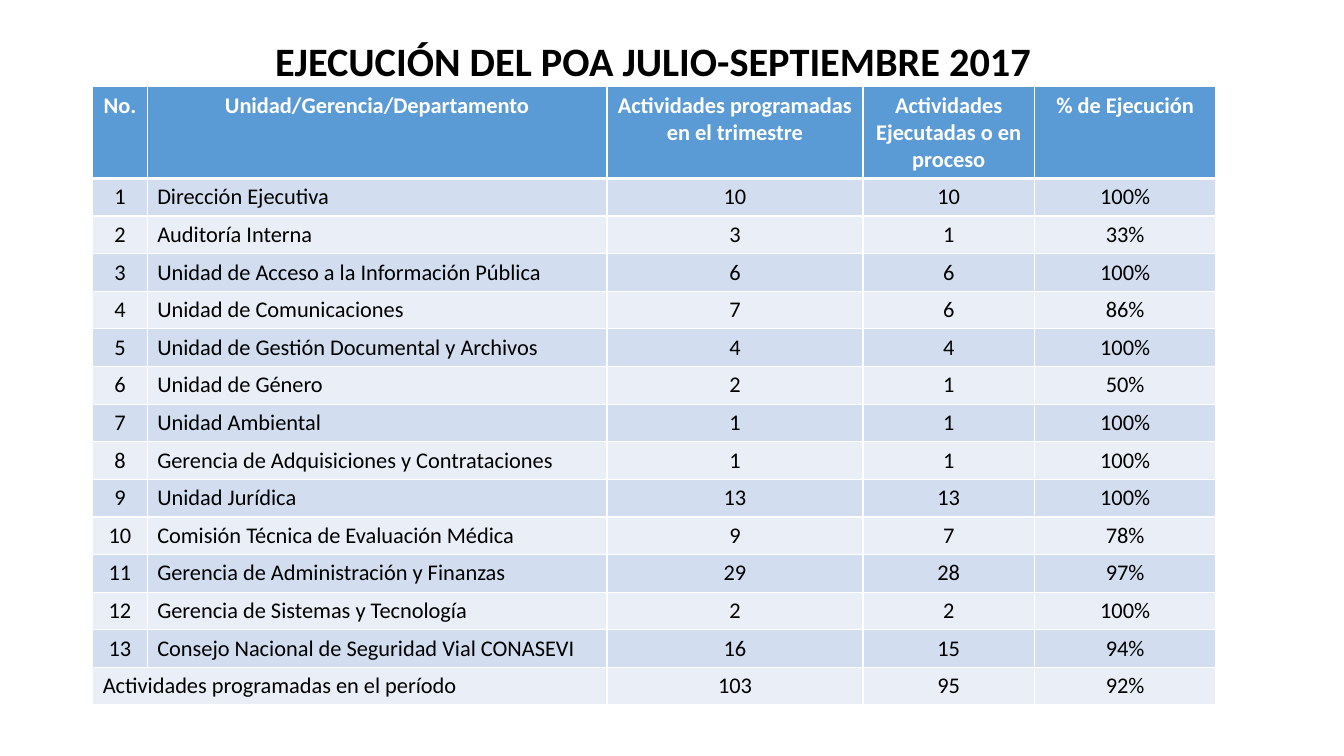
"""Builds the slide on the execution of the quarterly plan by unit."""
from lxml.etree import SubElement
from pptx import Presentation
from pptx.dml.color import RGBColor
from pptx.enum.text import MSO_ANCHOR, PP_ALIGN
from pptx.oxml.ns import qn
from pptx.util import Inches, Pt

TITLE = "EJECUCIÓN DEL POA JULIO-SEPTIEMBRE 2017"
HEADS = ["No.", "Unidad/Gerencia/Departamento",
         "Actividades programadas en el trimestre",
         "Actividades Ejecutadas o en proceso", "% de Ejecución"]
UNITS = [
    ("Dirección Ejecutiva", 10, 10),
    ("Auditoría Interna", 3, 1),
    ("Unidad de Acceso a la Información Pública", 6, 6),
    ("Unidad de Comunicaciones", 7, 6),
    ("Unidad de Gestión Documental y Archivos", 4, 4),
    ("Unidad de Género", 2, 1),
    ("Unidad Ambiental", 1, 1),
    ("Gerencia de Adquisiciones y Contrataciones", 1, 1),
    ("Unidad Jurídica", 13, 13),
    ("Comisión Técnica de Evaluación Médica", 9, 7),
    ("Gerencia de Administración y Finanzas", 29, 28),
    ("Gerencia de Sistemas y Tecnología", 2, 2),
    ("Consejo Nacional de Seguridad Vial CONASEVI", 16, 15),
]
TOTAL = "Actividades programadas en el período"
WIDTHS = [0.54, 4.56, 2.54, 1.7, 1.8]
LEFT, TOP, HIGH, HEAD = 0.92, 0.86, 6.14, 0.91
THEME = {"font": "Calibri", "title": 28.8, "body": 16, "ink": "000000",
         "white": "FFFFFF", "head": "5B9BD5", "bands": ("D2DEEF", "EAEFF7"),
         "rule": 1, "thick": 3}


def write(frame, text, size=THEME["body"], color=THEME["ink"], bold=False,
          align=PP_ALIGN.CENTER, space=None):
    """Puts one formatted paragraph in a text frame."""
    frame.word_wrap = True
    para = frame.paragraphs[0]
    para.alignment = align
    para.line_spacing = space
    run = para.add_run()
    run.text = text
    font = run.font
    font.name, font.size, font.bold = THEME["font"], Pt(size), bold
    font.color.rgb = RGBColor.from_string(color)


def border(cell, edges):
    """Draws white edges of the given widths on a cell."""
    props = cell._tc.get_or_add_tcPr()
    for side, width in edges.items():
        line = SubElement(props, qn(f"a:ln{side}"), w=str(Pt(width)))
        fill = SubElement(line, qn("a:solidFill"))
        SubElement(fill, qn("a:srgbClr"), val=THEME["white"])


def share(plan, done):
    """Gives the executed part as a whole percentage."""
    return f"{done / plan:.0%}"


def build():
    """Lays out the title and the table and saves the deck."""
    deck = Presentation()
    deck.slide_width, deck.slide_height = Inches(13.33), Inches(7.5)
    slide = deck.slides.add_slide(deck.slide_layouts[6])

    box = slide.shapes.add_textbox(*map(Inches, (0.73, 0.4, 11.5, 0.46)))
    box.text_frame.vertical_anchor = MSO_ANCHOR.MIDDLE
    write(box.text_frame, TITLE, size=THEME["title"], bold=True, space=0.9)

    plan = sum(unit[1] for unit in UNITS)
    done = sum(unit[2] for unit in UNITS)
    rows = [HEADS]
    rows += [(num, *unit, share(*unit[1:])) for num, unit in enumerate(UNITS, 1)]
    rows.append((TOTAL, "", plan, done, share(plan, done)))
    last = len(rows) - 1

    spot = map(Inches, (LEFT, TOP, sum(WIDTHS), HIGH))
    grid = slide.shapes.add_table(len(rows), len(WIDTHS), *spot).table
    for col, width in zip(grid.columns, WIDTHS):
        col.width = Inches(width)
    for r, row in enumerate(rows):
        grid.rows[r].height = Inches((HIGH - HEAD) / last if r else HEAD)
        for c, value in enumerate(row):
            cell = grid.cell(r, c)
            edges = dict.fromkeys("LRTB", THEME["rule"])
            if r == 0:
                edges["B"] = THEME["thick"]
            elif r == 1:
                edges["T"] = THEME["thick"]
            border(cell, edges)
            cell.fill.solid()
            shade = THEME["bands"][(r - 1) % 2] if r else THEME["head"]
            cell.fill.fore_color.rgb = RGBColor.from_string(shade)
            if value == "":
                continue
            left = r and (c == 1 or value == TOTAL)
            write(cell.text_frame, str(value), bold=r == 0,
                  color=THEME["ink"] if r else THEME["white"],
                  align=PP_ALIGN.LEFT if left else PP_ALIGN.CENTER)
    grid.cell(last, 0).merge(grid.cell(last, 1))
    deck.save("out.pptx")


if __name__ == "__main__":
    build()
